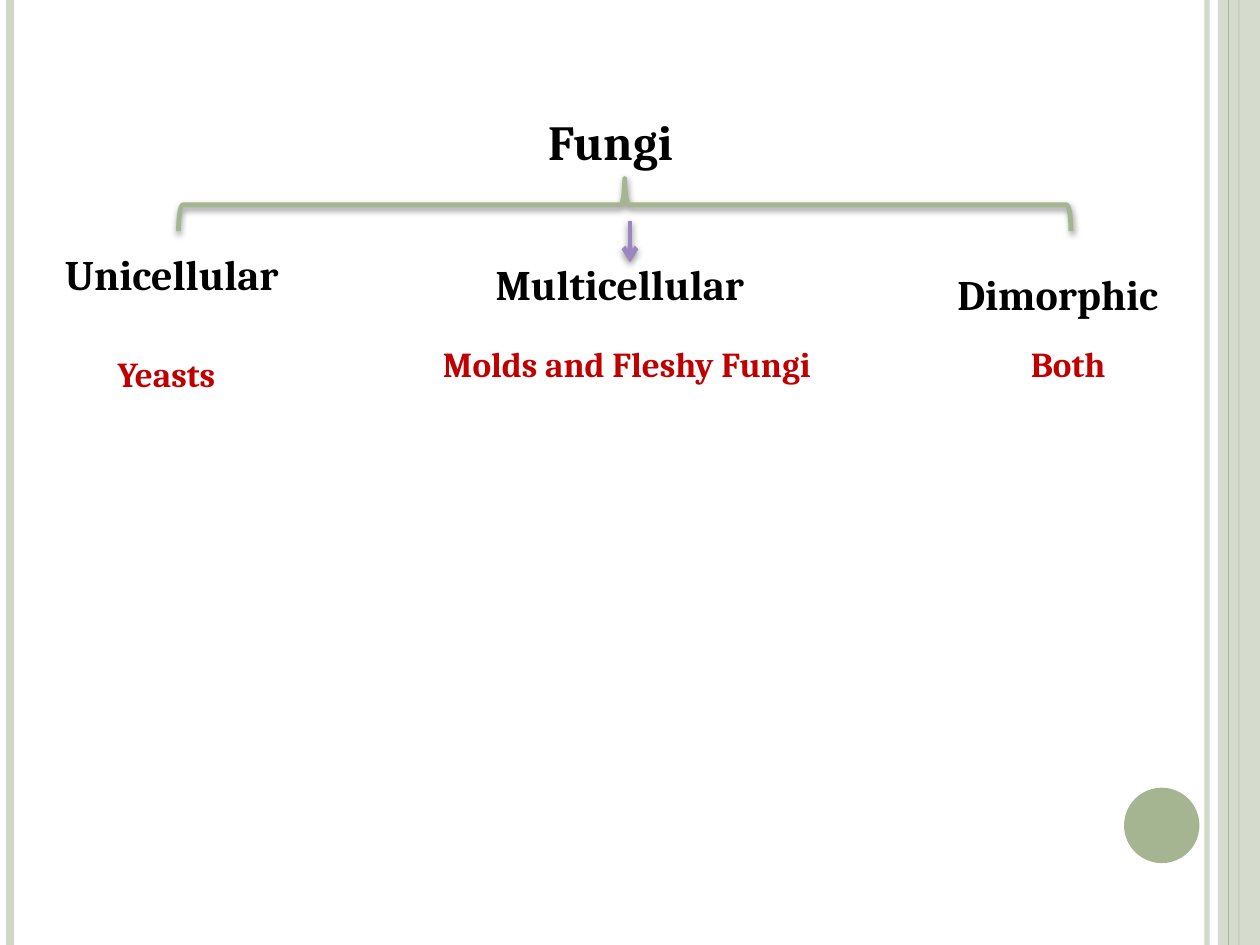
from lxml.etree import SubElement
from pptx import Presentation
from pptx.dml.color import RGBColor
from pptx.enum.shapes import MSO_CONNECTOR, MSO_SHAPE
from pptx.oxml.ns import qn
from pptx.util import Cm, Pt

WIDTH, HEIGHT = 25.4, 19.05
BLACK = RGBColor(0x00, 0x00, 0x00)
RED = RGBColor(0xC0, 0x00, 0x00)
SAGE = RGBColor(0xA5, 0xB5, 0x92)
PALE_SAGE = RGBColor(0xCF, 0xD7, 0xC7)
PURPLE = RGBColor(0x9C, 0x85, 0xC0)


def set_alpha(fill_parent, percent):
    """Make the solid colour under an element partly transparent."""
    color = fill_parent.find(qn("a:solidFill")).find(qn("a:srgbClr"))
    SubElement(color, qn("a:alpha"), val=str(percent * 1000))


def set_shadow(sp, visible):
    """Replace the theme shadow with a soft one below, or with none."""
    effects = sp._element.spPr.find(qn("a:effectLst"))
    if effects is None:
        effects = SubElement(sp._element.spPr, qn("a:effectLst"))
    if visible:
        shadow = SubElement(effects, qn("a:outerShdw"), blurRad=str(Pt(4)),
                            dist=str(Pt(1.6)), dir="5400000", rotWithShape="0")
        color = SubElement(shadow, qn("a:srgbClr"), val=str(BLACK))
        SubElement(color, qn("a:alpha"), val="42000")


def add_text(s, text, x, y, w, h, size=24, color=BLACK, spacing=1.0):
    """Add a bold left-aligned label."""
    tf = s.shapes.add_textbox(Cm(x), Cm(y), Cm(w), Cm(h)).text_frame
    tf.word_wrap = True
    p = tf.paragraphs[0]
    p.line_spacing = spacing
    r = p.add_run()
    r.text = text
    r.font.name, r.font.size, r.font.bold = "Cambria", Pt(size), True
    r.font.color.rgb = color


def add_vertical(s, x, top, bottom, color, width, shadow=False):
    """Add a vertical line and return its line element."""
    line = s.shapes.add_connector(MSO_CONNECTOR.STRAIGHT, Cm(x), Cm(top), Cm(x), Cm(bottom))
    line.line.color.rgb, line.line.width = color, Pt(width)
    set_shadow(line, shadow)
    return line._element.spPr.find(qn("a:ln"))


def add_solid(s, kind, x, y, w, h, color):
    """Add a filled shape without outline."""
    sp = s.shapes.add_shape(kind, Cm(x), Cm(y), Cm(w), Cm(h))
    sp.shadow.inherit = False
    sp.fill.solid()
    sp.fill.fore_color.rgb = color
    sp.line.fill.background()
    return sp


def add_frame(s, w, h):
    """Draw the side stripes and the circle within the slide box."""
    set_alpha(add_vertical(s, w - 1.07, 0, h, PALE_SAGE, 3), 93)
    add_vertical(s, 0.21, 0, h, PALE_SAGE, 4.5)
    add_vertical(s, w - 0.42, 0, h, SAGE, 1.5)
    band = add_solid(s, MSO_SHAPE.RECTANGLE, w - 0.85, 0, 0.85, h, PALE_SAGE)
    set_alpha(band._element.spPr, 87)
    add_vertical(s, w - 0.63, 0, h, SAGE, 0.75)
    add_solid(s, MSO_SHAPE.OVAL, w - 2.74, h - 3.17, 1.52, 1.52, SAGE)


def add_brace(s, x, y, w, h):
    """Draw a brace pointing upwards that fills the given box."""
    sp = s.shapes.add_shape(MSO_SHAPE.RIGHT_BRACE, Cm(x + (w - h) / 2),
                            Cm(y + (h - w) / 2), Cm(h), Cm(w))
    sp.rotation = 270
    sp.fill.background()
    sp.line.color.rgb, sp.line.width = SAGE, Pt(2.75)
    set_shadow(sp, True)


def add_branch(s, x, y, name, name_box, spacing, example, example_box):
    """Place a branch name and its example relative to the diagram corner."""
    for text, (dx, dy, w, h), style in (
            (name, name_box, {"spacing": spacing}),
            (example, example_box, {"size": 20, "color": RED})):
        add_text(s, text, x + dx, y + dy, w, h, **style)


def add_diagram(s, x, y):
    """Draw the classification of fungi from its top left corner."""
    add_text(s, "Fungi", x + 9.74, y, 3.86, 1.44, size=28)
    add_brace(s, x + 2.54, y + 1.48, 17.99, 1.06)
    branches = (
        ("Unicellular", (0, 2.76, 5.8, 1.27), 1.0, "Yeasts", (1.06, 4.87, 2.9, 1.12)),
        ("Multicellular", (8.68, 2.96, 6.83, 1.27), 1.0,
         "Molds and Fleshy Fungi", (7.62, 4.66, 9.4, 1.12)),
        ("Dimorphic", (17.99, 2.96, 5.3, 1.37), 1.2, "Both", (19.47, 4.66, 2.5, 1.12)),
    )
    for branch in branches:
        add_branch(s, x, y, *branch)
    ln = add_vertical(s, x + 11.64, y + 2.33, y + 3.17, PURPLE, 2.75, shadow=True)
    SubElement(ln, qn("a:tailEnd"), type="arrow")


def main():
    """Build the slide and save it."""
    prs = Presentation()
    prs.slide_width, prs.slide_height = Cm(WIDTH), Cm(HEIGHT)
    s = prs.slides.add_slide(prs.slide_layouts[6])
    add_frame(s, WIDTH, HEIGHT)
    add_diagram(s, 1.06, 2.12)
    prs.save("out.pptx")


if __name__ == "__main__":
    main()
